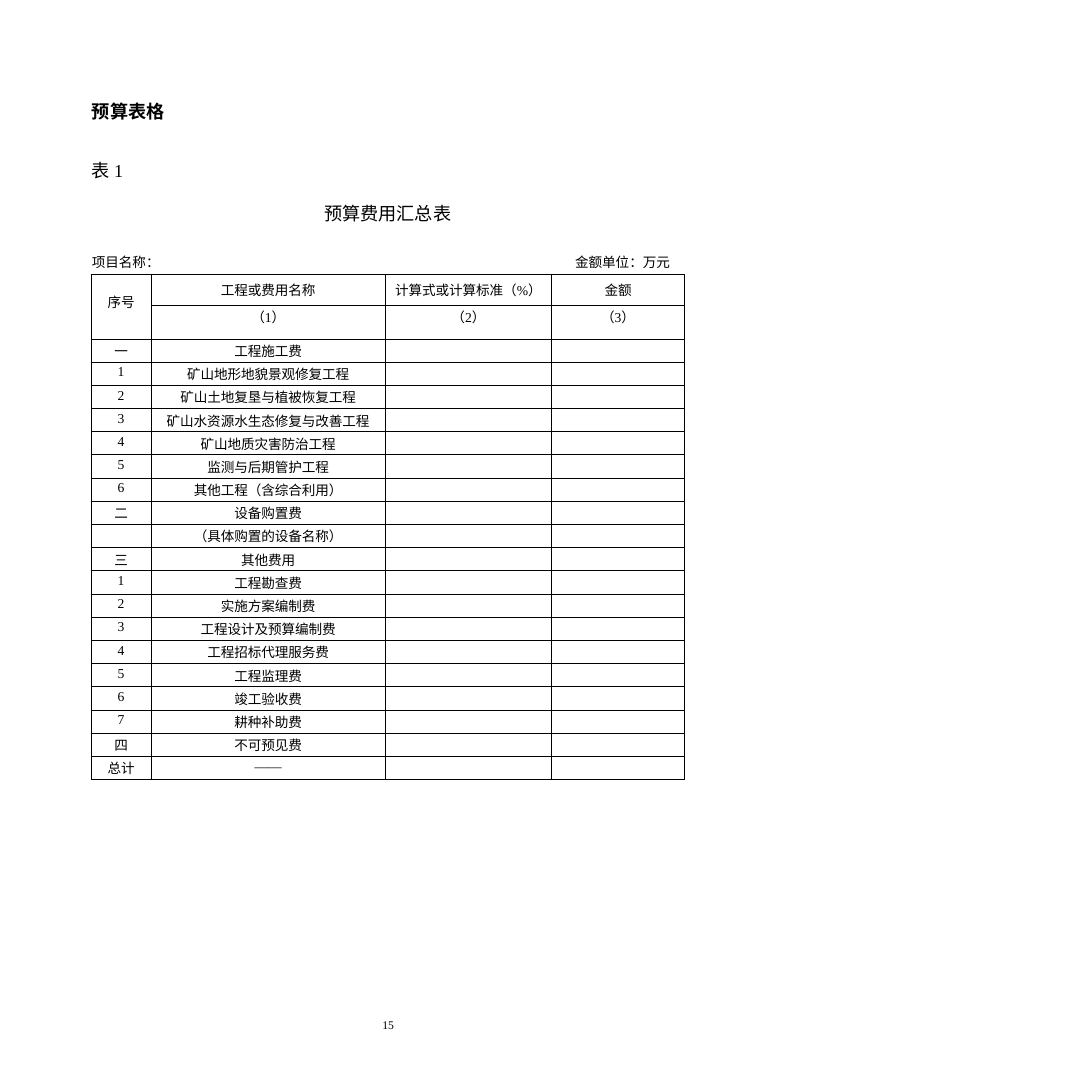
"""Builds the budget summary slide with its cost table."""
from itertools import groupby
from lxml.etree import SubElement
from pptx import Presentation
from pptx.dml.color import RGBColor as Rgb
from pptx.enum.text import MSO_ANCHOR as Anchor, MSO_AUTO_SIZE as Auto, PP_ALIGN as Align
from pptx.oxml import parse_xml
from pptx.oxml.ns import qn
from pptx.util import Pt

SANS, SERIF = "Noto Sans CJK SC", "Times New Roman"
NS = "http://schemas.openxmlformats.org/drawingml/2006/main"


def write(para, text, size, bold=False, align=Align.LEFT):
    para.alignment = align
    font = para.font
    font.size, font.bold = Pt(size), bold
    font.color.rgb = Rgb.from_string("000000")
    parts = [(serif, "".join(chars)) for serif, chars in
             groupby(text, lambda c: c == "—" or c.isascii() and c != " ")]
    mixed = len(parts) > 1
    font.name = SERIF if parts and parts[0][0] and not mixed else SANS
    SubElement(font._element, qn("a:ea"), typeface=font.name)
    for serif, part in parts:
        run = para.add_run()
        run.text = part
        if serif and mixed:
            run.font.name = SERIF


def place(shape, left, top, width, height, inset=1):
    shape.left, shape.top = Pt(left), Pt(top)
    shape.width, shape.height = Pt(width), Pt(height)
    frame = shape.text_frame
    frame.margin_left, frame.margin_top = Pt(inset), Pt(1)
    frame.margin_right = frame.margin_bottom = 0
    frame.word_wrap, frame.auto_size = False, Auto.NONE
    frame.vertical_anchor = Anchor.TOP
    return frame


deck = Presentation()
deck.slide_width, deck.slide_height = Pt(841.7), Pt(842.4)
slide = deck.slides.add_slide(deck.slide_layouts[5])
shapes = slide.shapes

title = place(shapes.title, 249, 154.8, 100, 19)
write(title.paragraphs[0], "预算费用汇总表", 14)

head = place(shapes.add_textbox(0, 0, 0, 0), 70, 76.3, 58, 66)
write(head.paragraphs[0], "预算表格", 14, bold=True)
label = head.add_paragraph()
label.space_before = Pt(29)
write(label, "表 1", 14)

notes = [
    ("项目名称：", 70, 195, 55, 14.4, 10.5, 1),
    ("金额单位：万元", 442.8, 195, 76, 14.4, 10.5, 1),
    ("15", 293, 784.5, 13, 12.2, 9, 2),
]
for text, left, top, width, height, size, inset in notes:
    frame = place(shapes.add_textbox(0, 0, 0, 0), left, top, width, height, inset)
    write(frame.paragraphs[0], text, size)

rows = [
    ("序号", "工程或费用名称", "计算式或计算标准（%）", "金额"),
    ("", "（1）", "（2）", "（3）"),
    ("一", "工程施工费"),
    ("1", "矿山地形地貌景观修复工程"),
    ("2", "矿山土地复垦与植被恢复工程"),
    ("3", "矿山水资源水生态修复与改善工程"),
    ("4", "矿山地质灾害防治工程"),
    ("5", "监测与后期管护工程"),
    ("6", "其他工程（含综合利用）"),
    ("二", "设备购置费"),
    ("", "（具体购置的设备名称）"),
    ("三", "其他费用"),
    ("1", "工程勘查费"),
    ("2", "实施方案编制费"),
    ("3", "工程设计及预算编制费"),
    ("4", "工程招标代理服务费"),
    ("5", "工程监理费"),
    ("6", "竣工验收费"),
    ("7", "耕种补助费"),
    ("四", "不可预见费"),
    ("总计", "——"),
]
widths = [46.4, 180.7, 128.2, 102.8]
heights = [23.5, 26.2] + [17.9] * (len(rows) - 2)
table = shapes.add_table(len(rows), len(widths), Pt(70.2), Pt(211.7),
                         Pt(sum(widths)), Pt(sum(heights))).table
table.first_row = table.horz_banding = False
for col, width in zip(table.columns, widths):
    col.width = Pt(width)
for row, height in zip(table.rows, heights):
    row.height = Pt(height)

for r, row in enumerate(rows):
    for c in range(len(widths)):
        text = row[c] if c < len(row) else ""
        cell = table.cell(r, c)
        cell.margin_left = cell.margin_right = cell.margin_bottom = 0
        cell.margin_top = Pt(4.2 if r == 0 else 2.1 if text.isdigit() or text == "——" else 1.5)
        write(cell.text_frame.paragraphs[0], text, 10.5, align=Align.CENTER)
        cell.fill.background()
        for i, side in enumerate("LRTB"):
            wide = 0.75 if (c, side) in [(0, "R"), (1, "L")] else 0.5
            line = parse_xml(f'<a:ln{side} xmlns:a="{NS}" w="{Pt(wide)}"><a:solidFill>'
                             f'<a:srgbClr val="000000"/></a:solidFill></a:ln{side}>')
            cell._tc.get_or_add_tcPr().insert(i, line)

corner = table.cell(0, 0)
corner.merge(table.cell(1, 0))
corner.vertical_anchor = Anchor.MIDDLE
corner.margin_top, corner.margin_bottom = 0, Pt(8)

deck.save("out.pptx")
